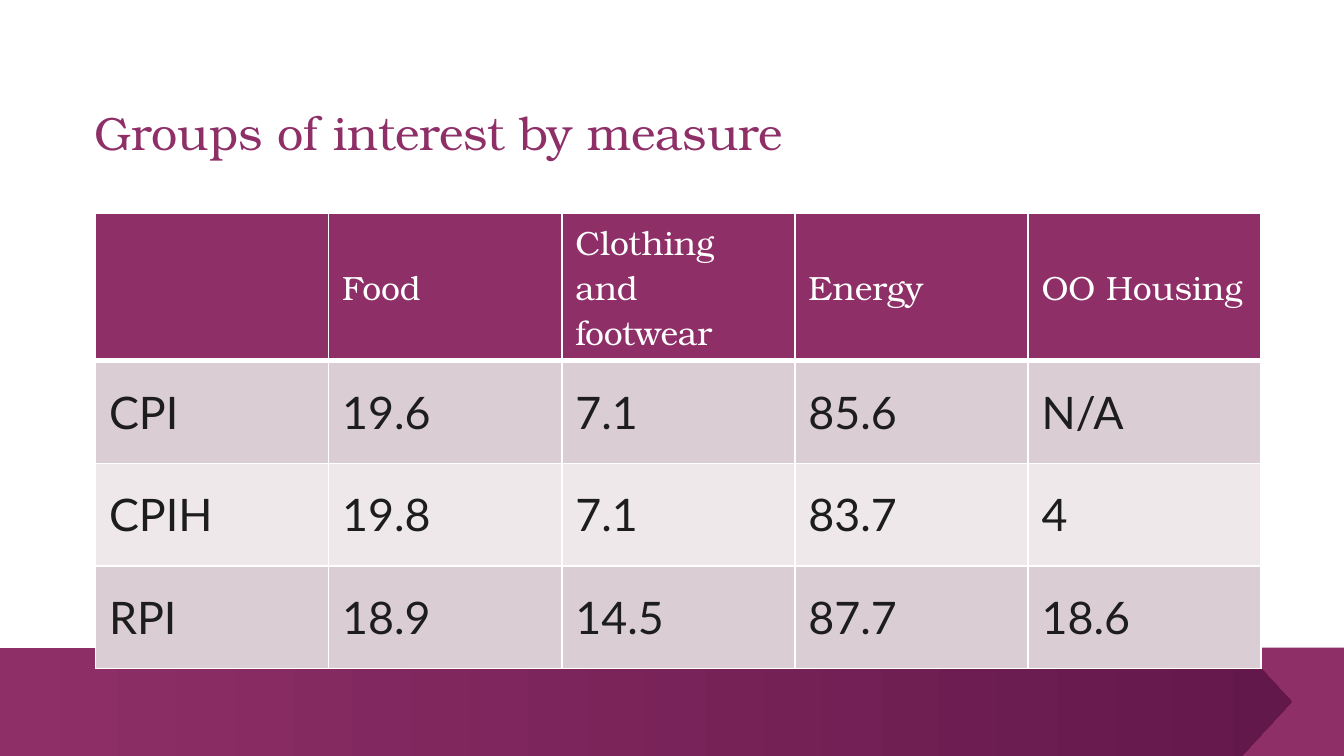
from lxml.etree import SubElement
from pptx import Presentation
from pptx.dml.color import RGBColor
from pptx.enum.shapes import MSO_SHAPE as Shape
from pptx.enum.text import MSO_ANCHOR as Anchor, MSO_AUTO_SIZE as AutoSize, PP_ALIGN as Align
from pptx.oxml.ns import qn
from pptx.util import Pt

PLUM, DARK_PLUM, WHITE, INK = "8F2F68", "63184B", "FFFFFF", "1D1D1D"
ROW_FILLS = ("DBCDD4", "EEE8EB")
SERIF, SANS = "TeX Gyre Bonum", "Lato"
ROWS = [
    ["", "Food", "Clothing and footwear", "Energy", "OO Housing"],
    ["CPI", "19.6", "7.1", "85.6", "N/A"],
    ["CPIH", "19.8", "7.1", "83.7", "4"],
    ["RPI", "18.9", "14.5", "87.7", "18.6"],
]


def color(value):
    """Turn a hex string into a colour."""
    return RGBColor.from_string(value)


def style_font(font, size, name, value):
    """Set the size, typeface and colour of a font."""
    font.size, font.name, font.bold = Pt(size), name, False
    font.color.rgb = color(value)


def add_band(slide, kind, left, width):
    """Add a plum band along the bottom edge."""
    band = slide.shapes.add_shape(kind, Pt(left), Pt(347), Pt(width), Pt(58))
    band.shadow.inherit = False
    band.fill.solid()
    band.fill.fore_color.rgb = color(PLUM)
    band.line.fill.background()
    return band


def add_arrow_band(slide):
    """Add the pointed band that darkens to the right."""
    band = add_band(slide, Shape.PENTAGON, 0, 692)
    band.adjustments[0] = 0.46
    band.fill.gradient()
    band.fill.gradient_angle = 0
    for stop, value in zip(band.fill.gradient_stops, (PLUM, DARK_PLUM)):
        stop.color.rgb = color(value)


def set_title(slide, text):
    """Place and format the title."""
    title = slide.shapes.title
    title.left, title.top, title.width, title.height = Pt(50.4), Pt(22.3), Pt(613.4), Pt(63.4)
    frame = title.text_frame
    frame.text = text
    frame.word_wrap, frame.auto_size = True, AutoSize.NONE
    frame.vertical_anchor = Anchor.BOTTOM
    frame.margin_left = frame.margin_top = frame.margin_right = frame.margin_bottom = 0
    paragraph = frame.paragraphs[0]
    paragraph.alignment = Align.LEFT
    style_font(paragraph.runs[0].font, 25, SERIF, PLUM)


def set_borders(cell, bottom):
    """Draw white borders with a given bottom width."""
    properties = cell._tc.get_or_add_tcPr()
    widths = {"a:lnL": 1, "a:lnR": 1, "a:lnT": 1, "a:lnB": bottom}
    for index, (tag, width) in enumerate(widths.items()):
        line = SubElement(properties, qn(tag), w=str(Pt(width)))
        fill = SubElement(line, qn("a:solidFill"))
        SubElement(fill, qn("a:srgbClr"), val=WHITE)
        properties.insert(index, line)


def format_cell(cell, text, row):
    """Fill in and format one table cell."""
    header = row == 0
    cell.text = text
    cell.vertical_anchor = Anchor.MIDDLE
    cell.fill.solid()
    cell.fill.fore_color.rgb = color(PLUM if header else ROW_FILLS[(row - 1) % 2])
    look = (18, SERIF, WHITE) if header else (24, SANS, INK)
    for run in cell.text_frame.paragraphs[0].runs:
        style_font(run.font, *look)
    above_or_below_header = row < 2
    set_borders(cell, 3 if header else 1)
    if above_or_below_header and not header:
        cell._tc.tcPr.find(qn("a:lnT")).set("w", str(Pt(3)))


def add_measure_table(slide):
    """Add the table of price measures."""
    table = slide.shapes.add_table(
        len(ROWS), len(ROWS[0]), Pt(51.2), Pt(114), Pt(624.5), Pt(220)
    ).table
    for row, texts in enumerate(ROWS):
        table.rows[row].height = Pt(55)
        for column, text in enumerate(texts):
            format_cell(table.cell(row, column), text, row)


def main():
    """Build and save the presentation."""
    presentation = Presentation()
    presentation.slide_width, presentation.slide_height = Pt(720), Pt(405)
    slide = presentation.slides.add_slide(presentation.slide_layouts[5])
    add_band(slide, Shape.RECTANGLE, 196, 524)
    add_arrow_band(slide)
    set_title(slide, "Groups of interest by measure")
    add_measure_table(slide)
    presentation.save("out.pptx")


if __name__ == "__main__":
    main()
